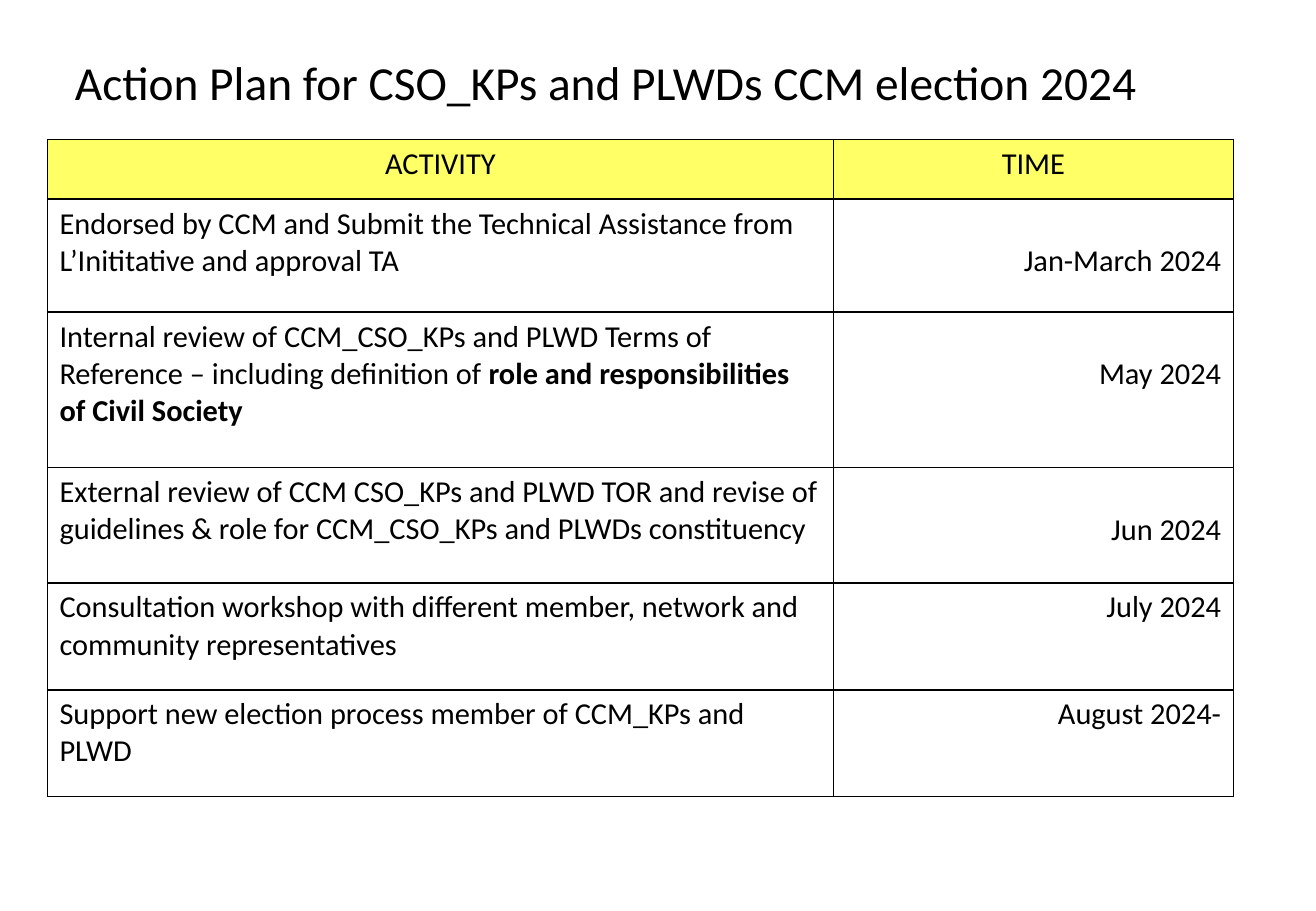
from dataclasses import dataclass

from lxml import etree
from pptx import Presentation
from pptx import util as u
from pptx.dml.color import RGBColor
from pptx.enum import text
from pptx.oxml import ns

BLACK = RGBColor(0x00, 0x00, 0x00)
YELLOW = RGBColor(0xFF, 0xFF, 0x66)
FONT = "Calibri"
COL_WIDTHS = (6.47, 3.29)
HEADER_HEIGHT = 0.49
CELL_TOP = 0.05
LINE_HEIGHT = 0.31


@dataclass(frozen=True)
class Step:
    activity: str
    time: str
    height: float
    bold_end: str = ""
    time_line: int = 0


STEPS = (
    Step("Endorsed by CCM and Submit the Technical Assistance from "
         "L’Inititative and approval TA", "Jan-March 2024", 0.93, time_line=1),
    Step("Internal review of CCM_CSO_KPs and PLWD Terms of Reference – "
         "including definition of ", "May 2024", 1.28,
         bold_end="role and responsibilities of Civil Society", time_line=1),
    Step("External review of CCM CSO_KPs and PLWD TOR and revise of guidelines "
         "& role for CCM_CSO_KPs and PLWDs constituency", "Jun 2024", 0.95,
         time_line=1),
    Step("Consultation workshop with different member, network and community "
         "representatives", "July 2024", 0.88),
    Step("Support new election process member of CCM_KPs and PLWD",
         "August 2024-", 0.88),
)


def write(tf, content: str, *, size: float = 18, bold_end: str = "",
          align=text.PP_ALIGN.LEFT, spacing: float = 1.0) -> None:
    tf.word_wrap = True
    p = tf.paragraphs[0]
    p.alignment = align
    p.line_spacing = spacing
    for part, bold in ((content, False), (bold_end, True)):
        if part:
            r = p.add_run()
            r.text = part
            r.font.name = FONT
            r.font.size = u.Pt(size)
            r.font.bold = bold
            r.font.color.rgb = BLACK


def add_borders(cell) -> None:
    tc_pr = cell._tc.get_or_add_tcPr()
    for side in ("lnL", "lnR", "lnT", "lnB"):
        ln = etree.SubElement(tc_pr, ns.qn(f"a:{side}"), w=str(u.Pt(1)))
        fill = etree.SubElement(ln, ns.qn("a:solidFill"))
        etree.SubElement(fill, ns.qn("a:srgbClr"), val=str(BLACK))


def format_cell(cell, color: RGBColor | None = None, skip_lines: int = 0) -> None:
    cell.margin_left = cell.margin_right = u.Inches(0.1)
    cell.margin_top = u.Inches(CELL_TOP + skip_lines * LINE_HEIGHT)
    cell.margin_bottom = u.Inches(0.05)
    add_borders(cell)
    if color is None:
        cell.fill.background()
    else:
        cell.fill.solid()
        cell.fill.fore_color.rgb = color


def add_plan(s) -> None:
    heights = [HEADER_HEIGHT, *(step.height for step in STEPS)]
    frame = s.shapes.add_table(
        len(heights), len(COL_WIDTHS), u.Inches(0.39), u.Inches(1.15),
        u.Inches(sum(COL_WIDTHS)), u.Inches(sum(heights)))
    table = frame.table
    table.first_row = table.horz_banding = False
    for column, width in zip(table.columns, COL_WIDTHS):
        column.width = u.Inches(width)
    for row, height in zip(table.rows, heights):
        row.height = u.Inches(height)
    for col, heading in enumerate(("ACTIVITY", "TIME")):
        cell = table.cell(0, col)
        format_cell(cell, YELLOW)
        write(cell.text_frame, heading, align=text.PP_ALIGN.CENTER)
    for row, step in enumerate(STEPS, 1):
        activity, time = table.cell(row, 0), table.cell(row, 1)
        format_cell(activity)
        write(activity.text_frame, step.activity, bold_end=step.bold_end)
        format_cell(time, skip_lines=step.time_line)
        write(time.text_frame, step.time, align=text.PP_ALIGN.RIGHT)


def add_title(s) -> None:
    sp = s.shapes.add_textbox(u.Inches(0.39), u.Inches(0.38),
                              u.Inches(9.19), u.Inches(0.67))
    tf = sp.text_frame
    tf.vertical_anchor = text.MSO_ANCHOR.MIDDLE
    write(tf, "Action Plan for CSO_KPs and PLWDs CCM election 2024",
          size=28.1, align=text.PP_ALIGN.CENTER, spacing=0.8)


def main() -> None:
    prs = Presentation()
    prs.slide_width = u.Inches(10.83)
    prs.slide_height = u.Inches(7.5)
    s = prs.slides.add_slide(prs.slide_layouts[6])
    add_plan(s)
    add_title(s)
    prs.save("out.pptx")


if __name__ == "__main__":
    main()
